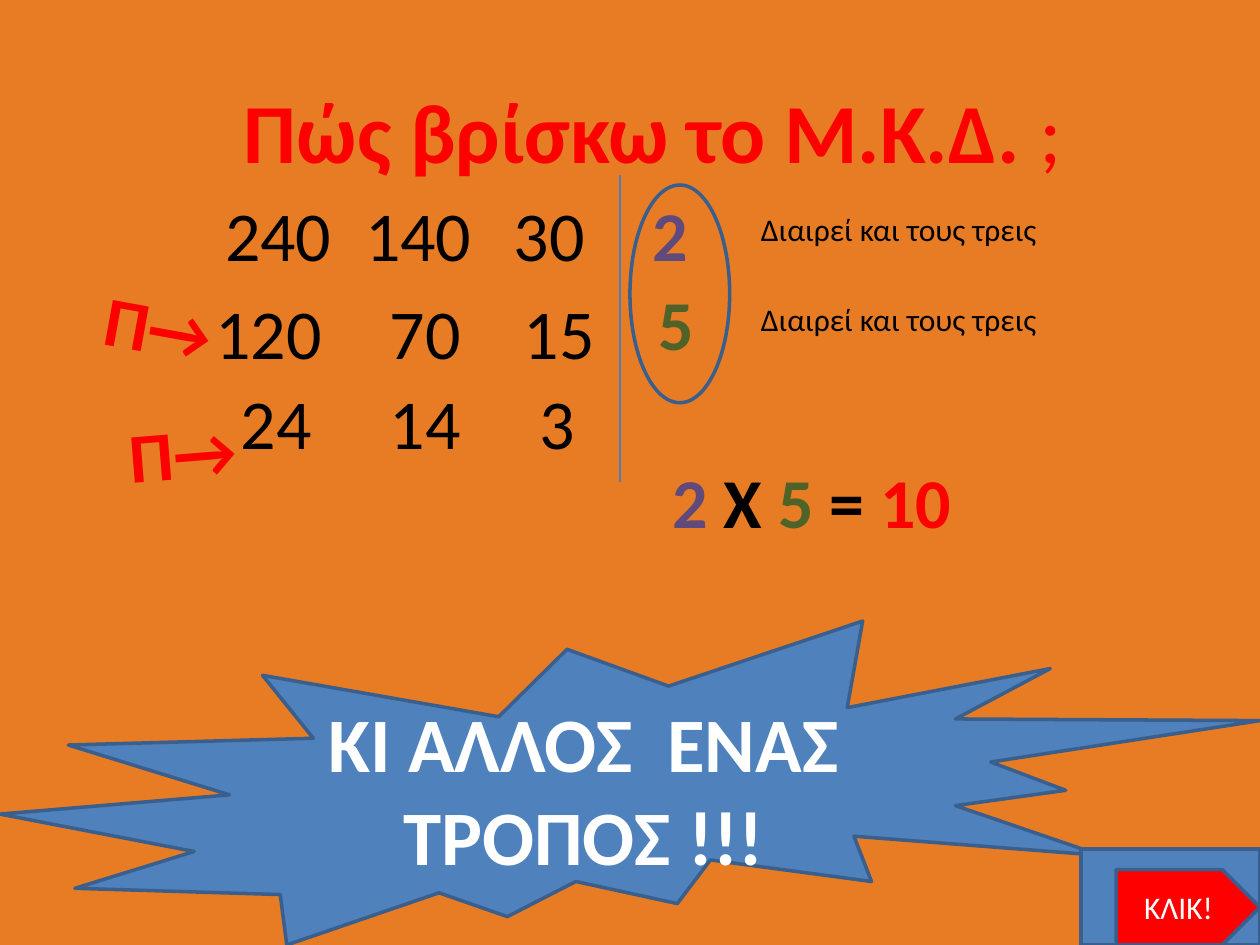
"""Build the slide that finds the greatest common divisor of 240, 140 and 30."""
import pptx
import pptx.dml.color
import pptx.enum.shapes
import pptx.enum.text
import pptx.oxml
import pptx.util

Cm = pptx.util.Cm
RGBColor = pptx.dml.color.RGBColor
Shape = pptx.enum.shapes.MSO_SHAPE
Anchor = pptx.enum.text.MSO_ANCHOR
Align = pptx.enum.text.PP_ALIGN

ORANGE = RGBColor(0xE7, 0x7C, 0x25)
RED = RGBColor(0xFF, 0x00, 0x00)
BLACK = RGBColor(0x00, 0x00, 0x00)
WHITE = RGBColor(0xFF, 0xFF, 0xFF)
PURPLE = RGBColor(0x60, 0x4A, 0x7B)
GREEN = RGBColor(0x4F, 0x62, 0x28)
BLUE = RGBColor(0x4F, 0x81, 0xBD)
OUTLINE = RGBColor(0x3A, 0x5F, 0x8C)
DIVIDER = RGBColor(0x4B, 0x7E, 0xBC)


def write(frame, spans, size, align=Align.LEFT, anchor=Anchor.TOP):
    """Fill a text frame with (text, colour, bold) spans."""
    frame.word_wrap = True
    frame.vertical_anchor = anchor
    para = frame.paragraphs[0]
    para.alignment = align
    for text, color, bold in spans:
        span = para.add_run()
        span.text = text
        span.font.color.rgb = color
        font_format = {"name": "Calibri", "size": pptx.util.Pt(size), "bold": bold}
        for name, value in font_format.items():
            setattr(span.font, name, value)


def add_text(left, top, width, spans, size=40, height=1.96, rotation=0, indent=0.25):
    """Add a text box measured in centimetres."""
    box = slide.shapes.add_textbox(Cm(left), Cm(top), Cm(width), Cm(height))
    box.rotation = rotation
    box.text_frame.margin_left = Cm(indent)
    write(box.text_frame, spans, size)


deck = pptx.Presentation()
deck.slide_width, deck.slide_height = Cm(25.4), Cm(19.05)
slide = deck.slides.add_slide(deck.slide_layouts[5])
slide.background.fill.solid()
slide.background.fill.fore_color.rgb = ORANGE

title = slide.shapes.title
title_place = {"left": 3.91, "top": 1.32, "width": 18.9, "height": 2.59}
for name, value in title_place.items():
    setattr(title, name, Cm(value))
title_spans = [("Πώς βρίσκω το Μ.Κ.Δ. ", RED, True), ("; ", RED, False)]
write(title.text_frame, title_spans, 48, Align.CENTER, Anchor.MIDDLE)

number_rows = [
    (3.73, [(4.29, "240"), (7.11, "140"), (10.11, "30")]),
    (5.72, [(4.09, "120"), (7.29, " 70"), (10.31, "15")]),
    (7.52, [(4.29, " 24"), (7.29, " 14"), (10.31, " 3")]),
]
for top, numbers in number_rows:
    for (left, number), width in zip(numbers, (3, 3.4, 2.2)):
        add_text(left, top, width, [(number, BLACK, False)])

divider = slide.shapes.add_connector(
    pptx.enum.shapes.MSO_CONNECTOR.STRAIGHT, Cm(12.5), Cm(3.53), Cm(12.5), Cm(9.72))
divider.line.color.rgb = DIVIDER
divider.line.width = pptx.util.Pt(0.75)
divider._element.spPr.append(pptx.oxml.parse_xml(
    '<a:effectLst xmlns:a="http://schemas.openxmlformats.org/drawingml/2006/main"/>'))

add_text(12.9, 3.73, 2.01, [("2", PURPLE, True)])
add_text(12.7, 5.54, 2.21, [(" ", BLACK, False), ("5", GREEN, True)])
for top in (4.11, 5.92):
    add_text(15.09, top, 8.2, [("Διαιρεί και τους τρεις", BLACK, False)], 18, 1.02)
add_text(13.31, 9.12, 6.2, [
    ("2", PURPLE, True), (" X ", BLACK, True), ("5", GREEN, True),
    (" = ", BLACK, True), ("10", RED, True)])

arrow_spans = [("Π→", RED, True)]
add_text(-0.56, 5.41, 5.41, arrow_spans, rotation=10.4, indent=2.7)
add_text(2.36, 8.08, 3.91, arrow_spans, rotation=355.4)

figures = [
    (Shape.EXPLOSION2, (0, 12.52, 25.4, 6.53), BLUE, "ΚΙ ΑΛΛΟΣ  ΕΝΑΣ ΤΡΟΠΟΣ !!!", 44, True),
    (Shape.OVAL, (12.7, 3.73, 2.01, 4.39), None, "", 18, False),
    (Shape.RECTANGLE, (21.79, 17.12, 3.61, 1.93), BLUE, "", 18, False),
    (Shape.PENTAGON, (22.5, 17.53, 2.9, 1.52), RED, "ΚΛΙΚ!", 18, False),
]
for kind, place, color, text, size, bold in figures:
    figure = slide.shapes.add_shape(kind, *map(Cm, place))
    figure.shadow.inherit = False
    if color is None:
        figure.fill.background()
    else:
        figure.fill.solid()
        figure.fill.fore_color.rgb = color
    figure.line.color.rgb = OUTLINE
    figure.line.width = pptx.util.Pt(2)
    if text:
        write(figure.text_frame, [(text, WHITE, bold)], size, Align.CENTER, Anchor.MIDDLE)

deck.save("out.pptx")
